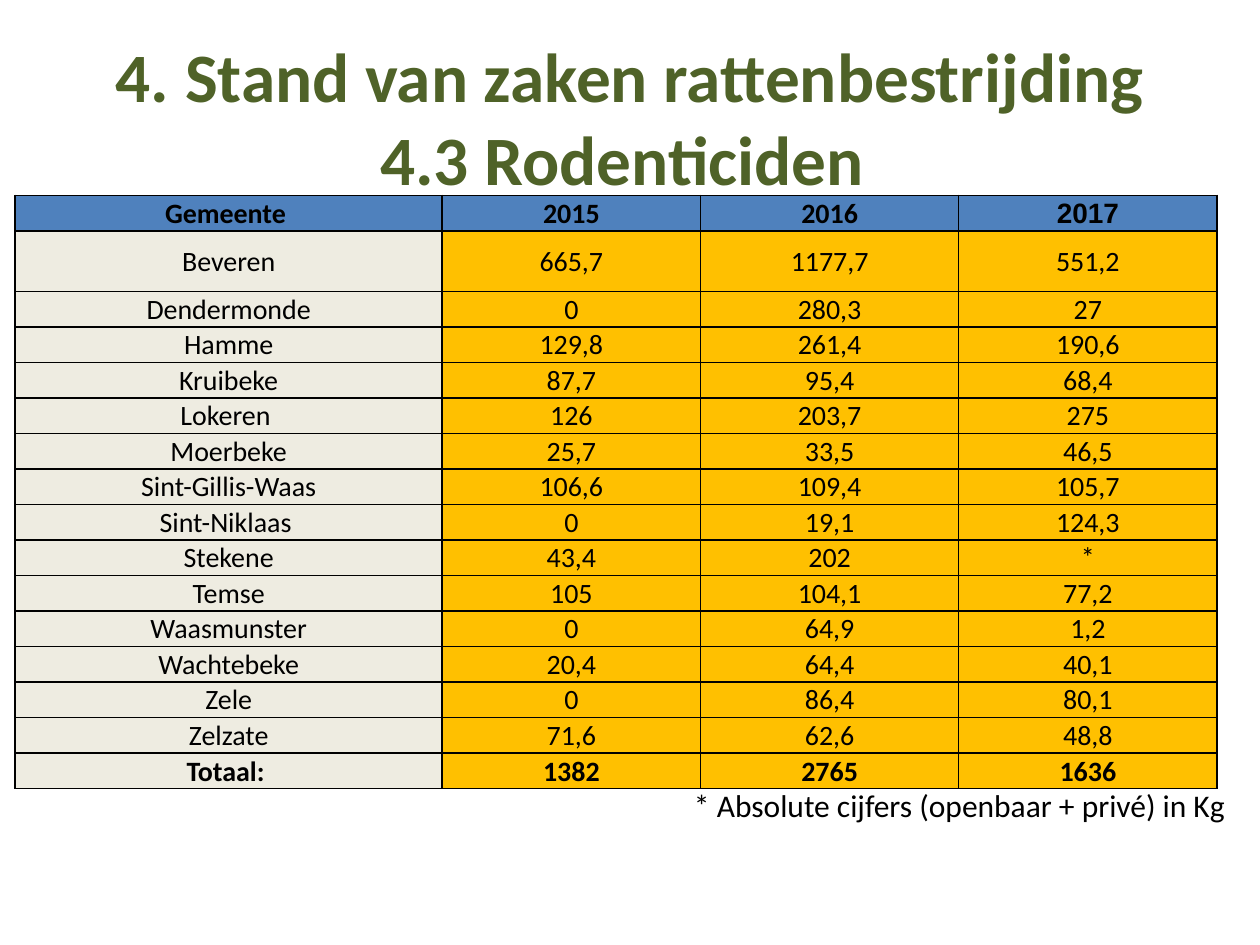
from dataclasses import dataclass

from lxml import etree
from pptx import Presentation
from pptx.dml.color import RGBColor
from pptx.enum.text import MSO_ANCHOR, MSO_AUTO_SIZE, PP_ALIGN
from pptx.oxml.ns import qn
from pptx.util import Inches, Pt

CENTER = PP_ALIGN.CENTER
MIDDLE = MSO_ANCHOR.MIDDLE
FIXED = MSO_AUTO_SIZE.NONE
GROW = MSO_AUTO_SIZE.SHAPE_TO_FIT_TEXT
TITLE_ONLY = 5


@dataclass(frozen=True)
class Theme:
    font: str = "Calibri"
    accent_font: str = "Arial"
    title_size: float = 39.6
    table_size: float = 16
    note_size: float = 18
    title_color: str = "4F6228"
    ink: str = "000000"
    header_fill: str = "4F81BD"
    name_fill: str = "EEECE1"
    value_fill: str = "FFC000"
    border_width: float = 1


TITLE = "4. Stand van zaken rattenbestrijding 4.3 Rodenticiden "
NOTE = "* Absolute cijfers (openbaar + privé) in Kg"
USAGE = [
    ("Gemeente ", "2015", "2016", "2017"),
    ("Beveren", "665,7", "1177,7", "551,2"),
    ("Dendermonde", "0", "280,3", "27"),
    ("Hamme", "129,8", "261,4", "190,6"),
    ("Kruibeke", "87,7", "95,4", "68,4"),
    ("Lokeren ", "126", "203,7", "275"),
    ("Moerbeke", "25,7", "33,5", "46,5"),
    ("Sint-Gillis-Waas", "106,6", "109,4", "105,7"),
    ("Sint-Niklaas ", "0", "19,1", "124,3"),
    ("Stekene", "43,4", "202", "*"),
    ("Temse", "105", "104,1", "77,2"),
    ("Waasmunster", "0", "64,9", "1,2"),
    ("Wachtebeke", "20,4", "64,4", "40,1"),
    ("Zele", "0", "86,4", "80,1"),
    ("Zelzate", "71,6", "62,6", "48,8"),
    ("Totaal: ", "1382", "2765", "1636"),
]
COLUMN_WIDTHS = [3.39, 2.05, 2.05, 2.05]
ROW_HEIGHT = 0.28
FIRST_TOWN_HEIGHT = 0.48


def set_values(target, values):
    for name, value in values.items():
        setattr(target, name, value)


class SlideBuilder:
    def __init__(self, slide, theme):
        self.slide = slide
        self.theme = theme

    def add_text(self, frame, text, size, color=None, font=None, bold=False, align=None):
        para = frame.paragraphs[0]
        para.alignment = align
        span = para.add_run()
        span.text = text
        set_values(span.font, {"name": font or self.theme.font, "size": Pt(size), "bold": bold})
        span.font.color.rgb = RGBColor.from_string(color or self.theme.ink)

    def title(self, text, left, top, width, height):
        box = self.slide.shapes.title
        set_values(box, {"left": Inches(left), "top": Inches(top),
                         "width": Inches(width), "height": Inches(height)})
        set_values(box.text_frame, {"auto_size": FIXED, "word_wrap": True,
                                    "vertical_anchor": MIDDLE})
        self.add_text(box.text_frame, text, self.theme.title_size,
                      self.theme.title_color, bold=True, align=CENTER)

    def note(self, text, left, top, width, height):
        box = self.slide.shapes.add_textbox(
            Inches(left), Inches(top), Inches(width), Inches(height))
        set_values(box.text_frame, {"word_wrap": False, "auto_size": GROW})
        self.add_text(box.text_frame, text, self.theme.note_size)

    def border(self, cell):
        properties = cell._tc.get_or_add_tcPr()
        for index, side in enumerate(("a:lnL", "a:lnR", "a:lnT", "a:lnB")):
            line = etree.Element(qn(side), w=str(Pt(self.theme.border_width)))
            fill = etree.SubElement(line, qn("a:solidFill"))
            etree.SubElement(fill, qn("a:srgbClr"), val=self.theme.ink)
            properties.insert(index, line)

    def cell(self, cell, text, fill, bold, font):
        set_values(cell, {"margin_left": Inches(0.01), "margin_right": Inches(0.01),
                          "margin_top": Inches(0.01), "margin_bottom": 0,
                          "vertical_anchor": MIDDLE})
        cell.fill.solid()
        cell.fill.fore_color.rgb = RGBColor.from_string(fill)
        self.border(cell)
        self.add_text(cell.text_frame, text, self.theme.table_size,
                      font=font, bold=bold, align=CENTER)

    def table(self, records, left, top, widths, heights):
        table = self.slide.shapes.add_table(
            len(records), len(widths), Inches(left), Inches(top),
            Inches(sum(widths)), Inches(sum(heights))).table
        for column, width in zip(table.columns, widths):
            column.width = Inches(width)
        for row, height in zip(table.rows, heights):
            row.height = Inches(height)
        last_row, last_column = len(records) - 1, len(widths) - 1
        for r, record in enumerate(records):
            for c, text in enumerate(record):
                if r == 0:
                    fill = self.theme.header_fill
                else:
                    fill = self.theme.value_fill if c else self.theme.name_fill
                newest_year = r == 0 and c == last_column
                font = self.theme.accent_font if newest_year else self.theme.font
                self.cell(table.cell(r, c), text, fill, r in (0, last_row), font)


def main():
    deck = Presentation()
    set_values(deck, {"slide_width": Inches(10), "slide_height": Inches(7.5)})
    page = deck.slides.add_slide(deck.slide_layouts[TITLE_ONLY])
    builder = SlideBuilder(page, Theme())
    builder.title(TITLE, 0.5, 0.3, 9, 1.25)
    heights = [ROW_HEIGHT] * len(USAGE)
    heights[1] = FIRST_TOWN_HEIGHT
    builder.table(USAGE, 0.12, 1.55, COLUMN_WIDTHS, heights)
    builder.note(NOTE, 5.41, 6.19, 4.53, 0.4)
    deck.save("out.pptx")


if __name__ == "__main__":
    main()
